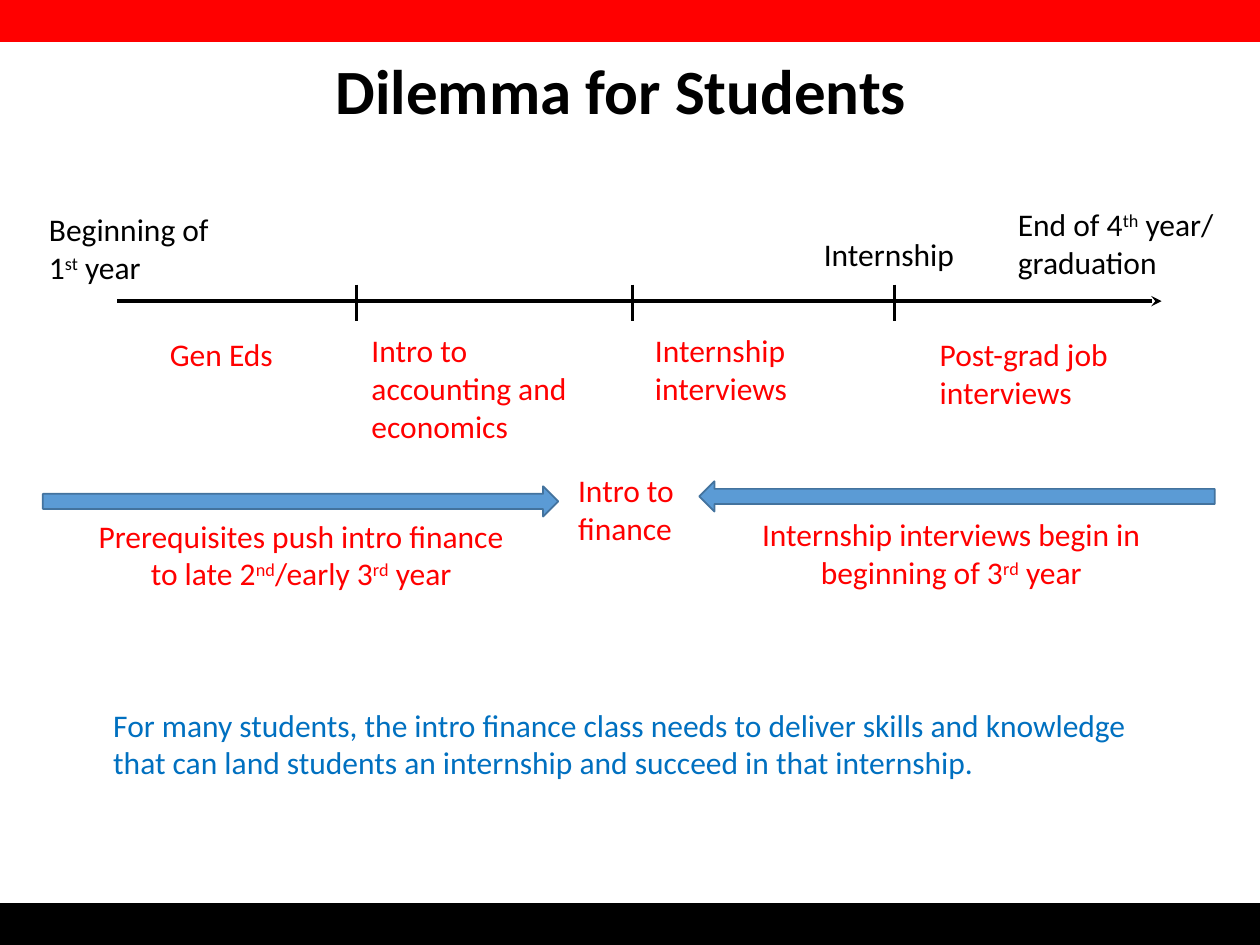
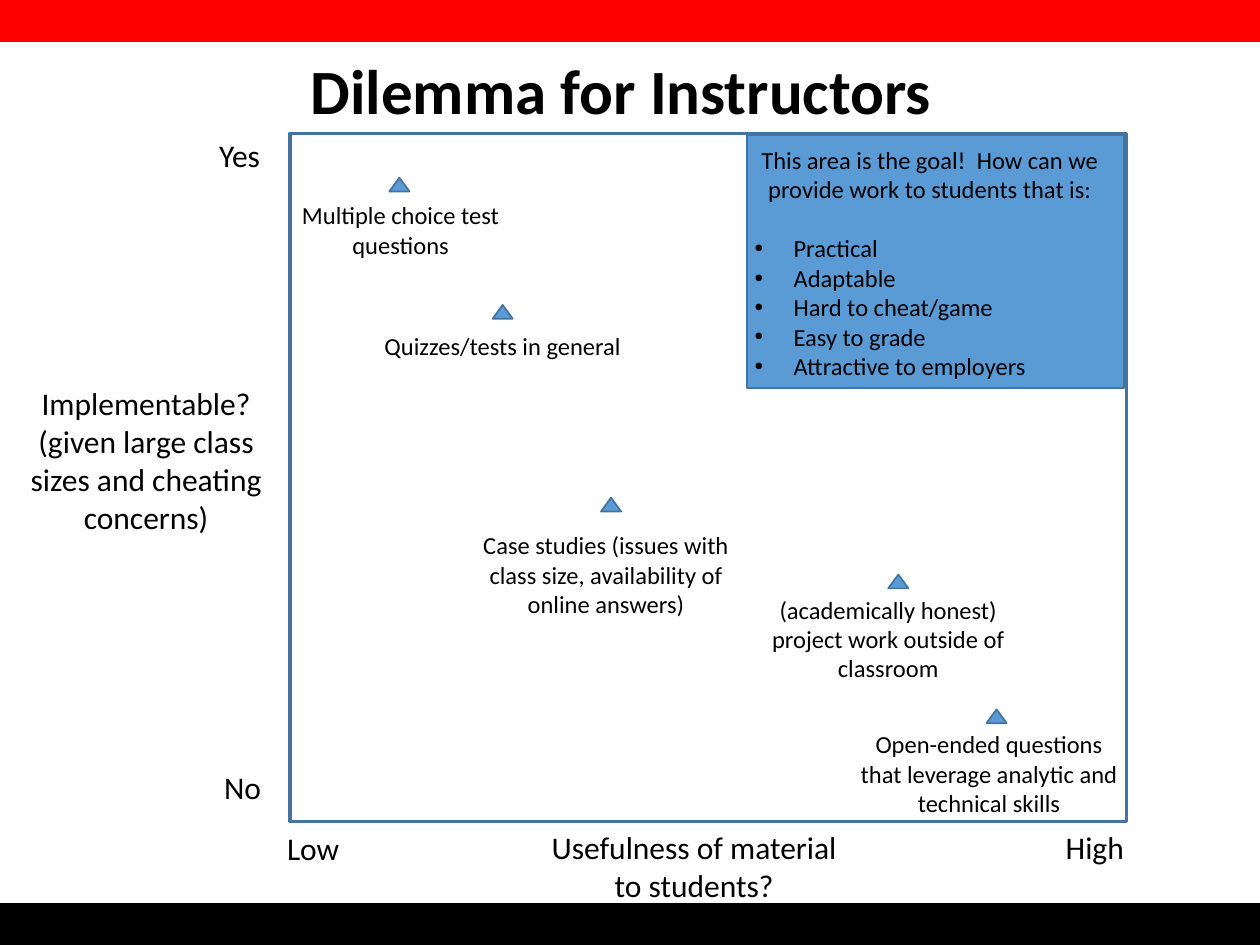
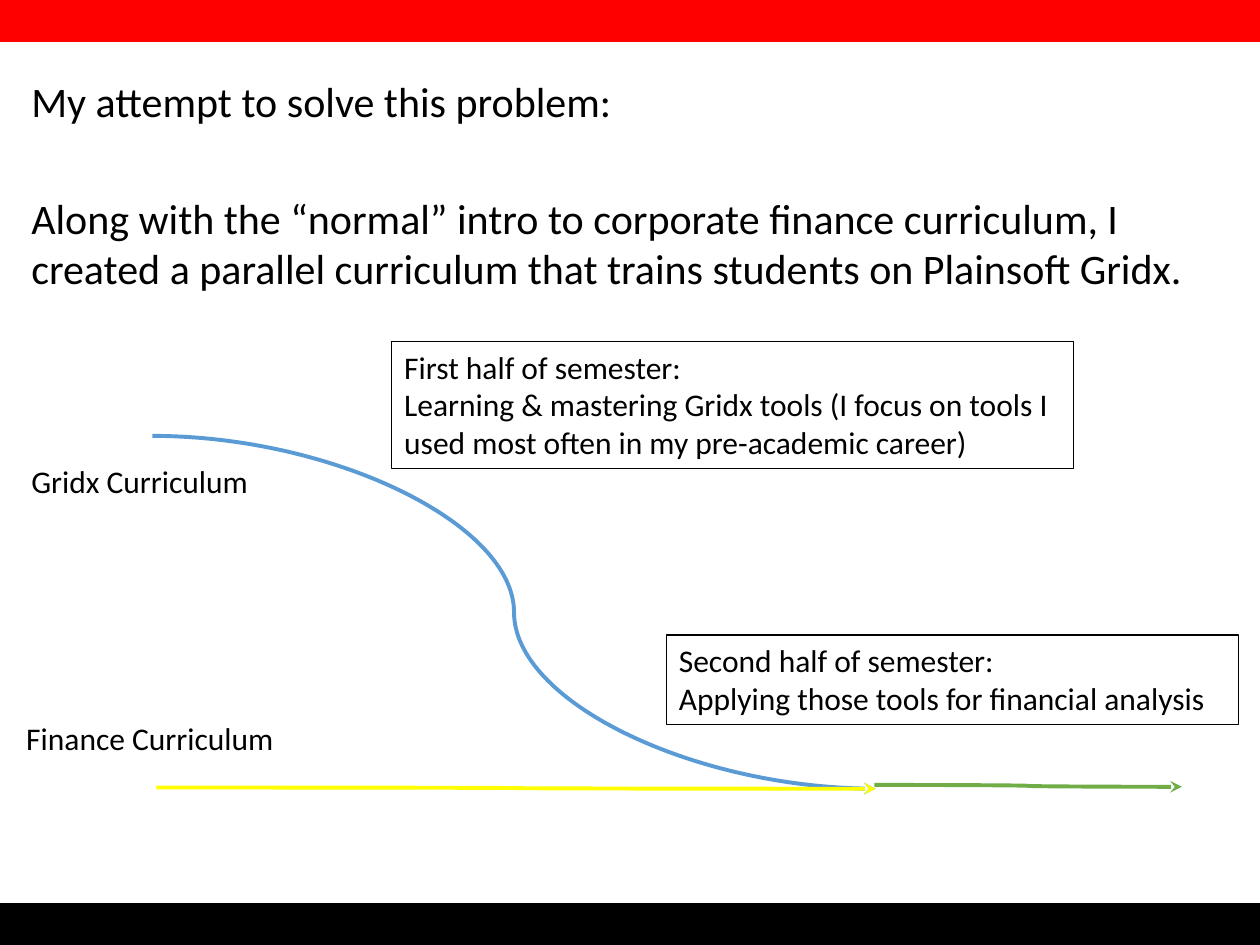
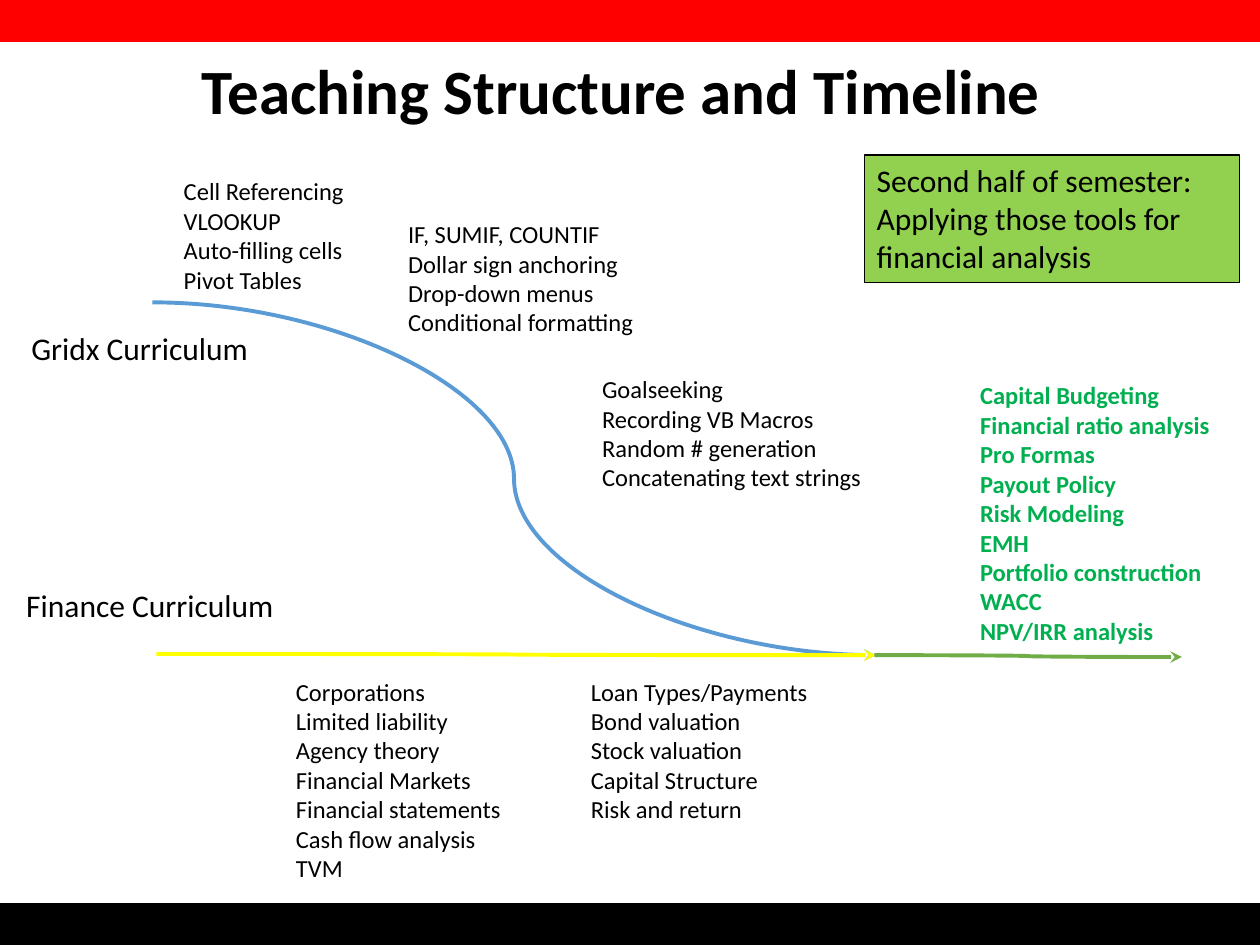
import dataclasses
import typing

import lxml.etree
import pptx
import pptx.dml.color
import pptx.enum.shapes
import pptx.enum.text
import pptx.oxml.ns
import pptx.util

# Shared look: a grid of 100 columns by 75 rows covers the slide
WIDTH, HEIGHT = pptx.util.Inches(10), pptx.util.Inches(7.5)
COLS, ROWS = 100, 75
BAND = 3.3
FONT = "Calibri"
BLACK, WHITE, RED = "000000", "FFFFFF", "FF0000"
BLUE, EDGE, NAVY = "5B9BD5", "43739E", "0070C0"
YELLOW, GREEN, LEAF, LIME = "FFFF00", "70AD47", "00B050", "92D050"
KINDS = pptx.enum.shapes.MSO_SHAPE
LINKS = pptx.enum.shapes.MSO_CONNECTOR
ALIGN = pptx.enum.text.PP_ALIGN


@dataclasses.dataclass
class Note:
    """Text on the grid: one string per paragraph, ^marks^ superscript."""
    lines: typing.Sequence[str]
    x: float
    y: float
    w: float
    h: float
    size: float = 18
    color: str = BLACK
    bold: bool = False
    center: bool = False
    grow: bool = True
    middle: bool = False
    fill: str = ""
    edge: str = ""


@dataclasses.dataclass
class Block:
    """Preset shape on the grid."""
    kind: typing.Any
    x: float
    y: float
    w: float
    h: float
    fill: str = BLUE
    edge: str = EDGE
    weight: float = 1
    turn: float = 0


@dataclasses.dataclass
class Link:
    """Line or curve between two grid points."""
    x1: float
    y1: float
    x2: float
    y2: float
    color: str = BLACK
    weight: float = 2
    kind: typing.Any = LINKS.STRAIGHT
    arrow: bool = False


@dataclasses.dataclass
class Mark:
    """Triangle on the plot with its label."""
    text: str
    x: float
    y: float
    left: float
    top: float
    h: float


def hue(code: str) -> pptx.dml.color.RGBColor:
    return pptx.dml.color.RGBColor.from_string(code)


def col(n: float) -> int:
    return round(WIDTH * n / COLS)


def row(n: float) -> int:
    return round(HEIGHT * n / ROWS)


def place(item) -> tuple:
    return col(item.x), row(item.y), col(item.w), row(item.h)


def child(parent, tag: str, **attrs: str) -> None:
    lxml.etree.SubElement(parent, pptx.oxml.ns.qn(tag), attrs)


def paint(shape, fill: str, edge: str, weight: float) -> None:
    if fill:
        shape.fill.solid()
        shape.fill.fore_color.rgb = hue(fill)
    if edge:
        shape.line.color.rgb = hue(edge)
        shape.line.width = pptx.util.Pt(weight)


def write(par, text: str, note: Note) -> None:
    for i, part in enumerate(text.split("^")):
        run = par.add_run()
        run.text = part
        font = run.font
        font.name, font.size, font.bold = FONT, pptx.util.Pt(note.size), note.bold
        font.color.rgb = hue(note.color)
        if i % 2:
            font._element.set("baseline", "30000")


def add_note(slide, note: Note):
    box = slide.shapes.add_textbox(*place(note))
    paint(box, note.fill, note.edge, 0.75)
    frame = box.text_frame
    frame.word_wrap = True
    if note.grow:
        frame.auto_size = pptx.enum.text.MSO_AUTO_SIZE.SHAPE_TO_FIT_TEXT
    if note.middle:
        frame.vertical_anchor = pptx.enum.text.MSO_ANCHOR.MIDDLE
    for i, text in enumerate(note.lines):
        par = frame.add_paragraph() if i else frame.paragraphs[0]
        par.alignment = ALIGN.CENTER if note.center else ALIGN.LEFT
        write(par, text, note)
    return frame


def add_block(slide, block: Block):
    shape = slide.shapes.add_shape(block.kind, *place(block))
    shape.shadow.inherit = False
    shape.rotation = block.turn
    paint(shape, block.fill, block.edge, block.weight)
    return shape


def add_link(slide, link: Link) -> None:
    line = slide.shapes.add_connector(
        link.kind, col(link.x1), row(link.y1), col(link.x2), row(link.y2))
    line.line.color.rgb = hue(link.color)
    line.line.width = pptx.util.Pt(link.weight)
    if link.arrow:
        child(line.line._ln, "a:tailEnd", type="stealth")
    child(line._element.spPr, "a:effectLst")


def add_title(slide, text: str) -> None:
    add_note(slide, Note([text], 0.3, 0.8, 98, 12.5, 36, bold=True,
                         center=True, grow=False, middle=True))


def add_bands(slide, master) -> None:
    """Draw the two bands, then move them to the master for all slides."""
    tree = master.shapes._spTree
    for y, color in ((0, RED), (ROWS - BAND, BLACK)):
        band = add_block(slide, Block(KINDS.RECTANGLE, 0, y, COLS, BAND, color, color))
        top = max(shape.shape_id for shape in master.shapes)
        band._element.nvSpPr.cNvPr.set("id", str(top + 1))
        tree.append(band._element)


def add_flow(slide, top: float, out: float) -> None:
    """Two curricula that merge; top is the row where the curve starts."""
    end = top + 28
    for x1, y1, x2, y2, color in (
        (12.1, top, 69.5, end, BLUE),
        (12.4, end - 0.1, 69.5, end, YELLOW),
        (69.4, out, 93.8, out + 0.15, GREEN),
    ):
        add_link(slide, Link(x1, y1, x2, y2, color, 2.25, LINKS.CURVE, True))
    add_note(slide, Note(["Finance Curriculum"], 1.1, top + 22, 21.9, 4))
    add_note(slide, Note(["Gridx Curriculum"], 1.5, top + 1.6, 21.9, 4))


def draw_students(slide) -> None:
    add_title(slide, "Dilemma for Students")
    # Timeline with year ticks
    add_link(slide, Link(9.3, 23.9, 92.2, 23.9, arrow=True))
    for x in (28.3, 50.2, 71):
        add_link(slide, Link(x, 22.6, x, 25.5))
    # Opposing pushes
    add_block(slide, Block(KINDS.RIGHT_ARROW, 3.4, 38.6, 40.9, 2.4))
    add_block(slide, Block(KINDS.RIGHT_ARROW, 55.5, 38.2, 40.9, 2.4, turn=180))
    # Labels
    for note in (
        Note(["Beginning of 1^st^ year"], 2.9, 16.2, 15.8, 7.1),
        Note(["End of 4^th^ year/", "graduation"], 79.8, 15.8, 18.5, 7.1),
        Note(["Internship"], 64.4, 18.2, 13, 4),
        Note(["Gen Eds"], 12.5, 26.1, 15.8, 4, color=RED),
        Note(["Intro to accounting and economics"], 28.5, 25.8, 18.7, 10.1, color=RED),
        Note(["Internship interviews"], 51, 25.8, 18.7, 7.1, color=RED),
        Note(["Post-grad job", "interviews"], 73.6, 26.1, 18.7, 7.1, color=RED),
        Note(["Intro to finance"], 44.9, 36.9, 14.6, 7.1, color=RED),
        Note(["Prerequisites push intro finance to late 2^nd^/early 3^rd^ year"],
             5.7, 40.5, 36.4, 7.1, color=RED, center=True),
        Note(["Internship interviews begin in beginning of 3^rd^ year"],
             57.3, 40.4, 36.4, 7.1, color=RED, center=True),
        Note(["For many students, the intro finance class needs to deliver skills and "
              "knowledge that can land students an internship and succeed in that "
              "internship."], 8, 55.5, 84.2, 7.1, color=NAVY),
    ):
        add_note(slide, note)


def draw_goal(slide) -> None:
    add_block(slide, Block(KINDS.RECTANGLE, 59.3, 10.7, 29.9, 20.1))
    frame = add_note(slide, Note(
        ["This area is the goal!  How can we provide work to students that is:",
         "Practical", "Adaptable", "Hard to cheat/game", "Easy to grade",
         "Attractive to employers"], 58.9, 11, 29.8, 19.9, 14, grow=False))
    head, *points = frame.paragraphs
    head.alignment = ALIGN.CENTER
    points[0].space_before = pptx.util.Pt(17)
    for par in points:
        props = par._p.get_or_add_pPr()
        props.set("marL", str(col(3.1)))
        props.set("indent", str(-col(3.1)))
        child(props, "a:buFont", typeface="Arial")
        child(props, "a:buChar", char="•")


def draw_plot(slide) -> None:
    add_block(slide, Block(KINDS.RECTANGLE, 23, 10.6, 66.4, 54.6, WHITE, EDGE, 2))
    # Axis labels
    for text, x, y, w, h, center in (
        ("Yes", 16.4, 10.3, 6.4, 4, False),
        ("Implementable? (given large class sizes and cheating concerns)",
         0.1, 30, 23, 13.1, True),
        ("No", 16.8, 60.5, 6.9, 4, False),
        ("Usefulness of material to students?", 42.6, 65.2, 25, 7.1, True),
        ("High", 83.6, 65.2, 7, 4, False),
        ("Low", 21.8, 65.3, 7, 4, False),
    ):
        add_note(slide, Note([text], x, y, w, h, center=center))
    # Kinds of work
    for mark in (
        Mark("Multiple choice test questions", 30.9, 14.1, 20.3, 15.4, 5.7),
        Mark("Quizzes/tests in general", 39.1, 24.2, 28.4, 25.8, 3.4),
        Mark("Case studies (issues with class size, availability of online answers)",
             47.7, 39.5, 36.6, 41.6, 8.1),
        Mark("(academically honest) project work outside of classroom",
             70.5, 45.6, 59, 46.7, 8.1),
        Mark("Open-ended questions that leverage analytic and technical skills",
             78.3, 56.3, 67, 57.4, 8.1),
    ):
        add_block(slide, Block(KINDS.ISOSCELES_TRIANGLE, mark.x, mark.y, 1.6, 1.1))
        add_note(slide, Note([mark.text], mark.left, mark.top, 23, mark.h, 14,
                             center=True))
    draw_goal(slide)
    add_title(slide, "Dilemma for Instructors")


def draw_attempt(slide) -> None:
    frame = add_note(slide, Note(
        ["My attempt to solve this problem:",
         "Along with the “normal” intro to corporate finance curriculum, I created a "
         "parallel curriculum that trains students on Plainsoft Gridx."],
        0.9, 5.5, 98.2, 57.5, 24, grow=False))
    for par in frame.paragraphs:
        par._p.get_or_add_pPr().set("marL", str(col(0.6)))
    frame.paragraphs[1].space_before = pptx.util.Pt(38)
    add_flow(slide, 34.6, 62.3)
    # Halves of the semester
    add_note(slide, Note(
        ["Second half of semester:", "Applying those tools for financial analysis"],
        52.9, 50.4, 45.4, 7.1, edge=BLACK))
    add_note(slide, Note(
        ["First half of semester:",
         "Learning & mastering Gridx tools (I focus on tools I used most often in my "
         "pre-academic career)"], 31.1, 27.1, 54.1, 10.1, edge=BLACK))


def draw_topics(slide) -> None:
    add_title(slide, "Teaching Structure and Timeline")
    add_flow(slide, 24, 52)
    # Topics along the way
    for lines, x, y, w, h in (
        (["Cell Referencing", "VLOOKUP", "Auto-filling cells", "Pivot Tables"],
         13.6, 13.5, 17.8, 10.4),
        (["IF, SUMIF, COUNTIF", "Dollar sign anchoring", "Drop-down menus",
          "Conditional formatting"], 31.4, 16.9, 20.8, 10.4),
        (["Goalseeking", "Recording VB Macros", "Random # generation",
          "Concatenating text strings"], 46.8, 29.2, 22.7, 10.4),
        (["Corporations", "Limited liability", "Agency theory", "Financial Markets",
          "Financial statements", "Cash flow analysis", "TVM"], 22.5, 53.2, 19.8, 17.5),
        (["Loan Types/Payments", "Bond valuation", "Stock valuation",
          "Capital Structure", "Risk and return"], 45.9, 53.2, 21.1, 12.8),
    ):
        add_note(slide, Note(lines, x, y, w, h, 14))
    # Merged half
    add_note(slide, Note(
        ["Capital Budgeting", "Financial ratio analysis", "Pro Formas", "Payout Policy",
         "Risk Modeling", "EMH", "Portfolio construction", "WACC", "NPV/IRR analysis"],
        76.8, 29.7, 21.1, 22.2, 14, LEAF, bold=True))
    add_note(slide, Note(
        ["Second half of semester:", "Applying those tools for financial analysis"],
        68.6, 12.3, 29.8, 10.1, fill=LIME, edge=BLACK))


def main() -> None:
    deck = pptx.Presentation()
    deck.slide_width, deck.slide_height = WIDTH, HEIGHT
    blank = deck.slide_layouts[6]
    for i, draw in enumerate((draw_students, draw_plot, draw_attempt, draw_topics)):
        slide = deck.slides.add_slide(blank)
        if i == 0:
            add_bands(slide, deck.slide_master)
        draw(slide)
    deck.save("out.pptx")


if __name__ == "__main__":
    main()
